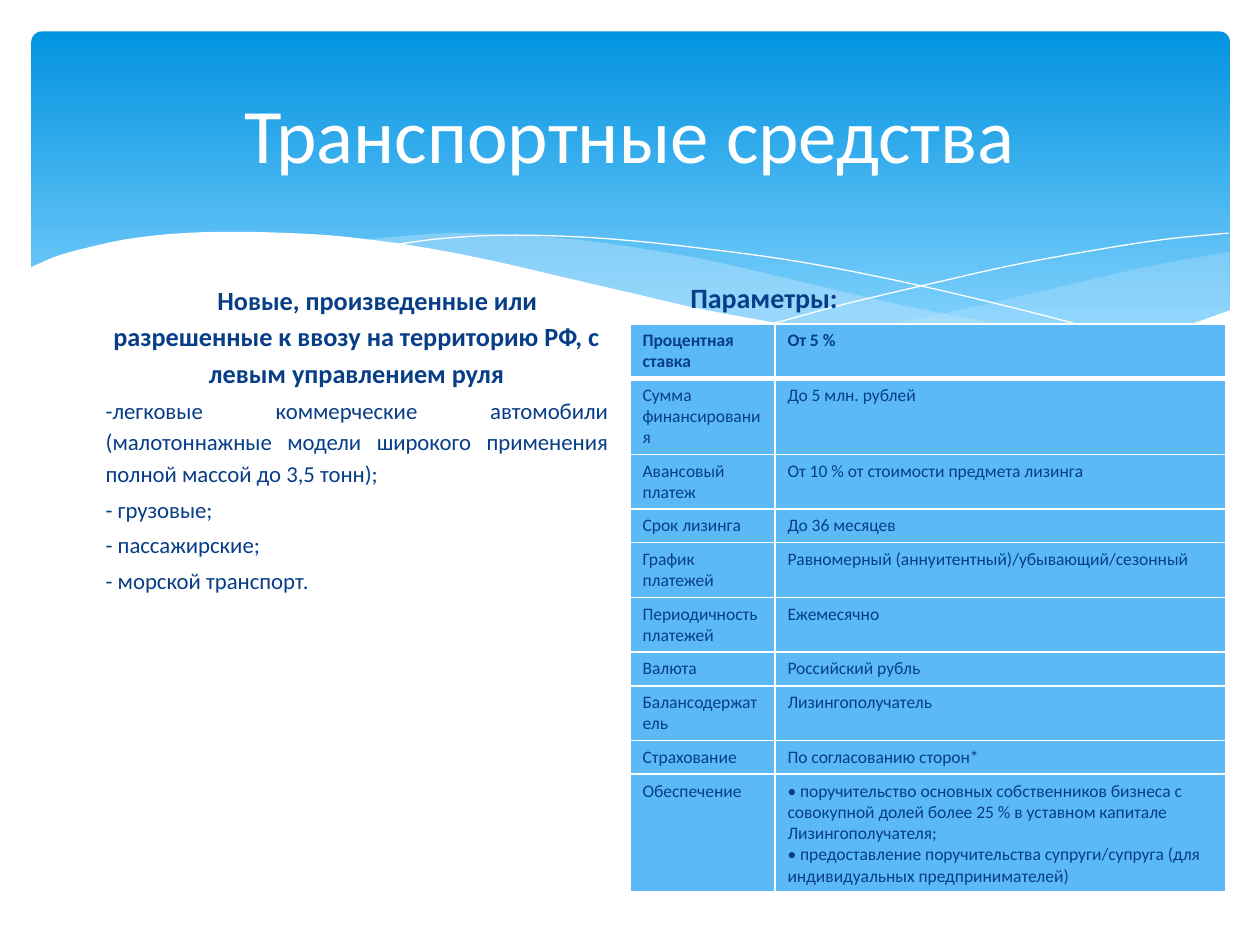
"""Build the vehicle leasing slide: wave header, eligible vehicles and a table of terms."""
from lxml.etree import SubElement
from pptx import Presentation
from pptx.dml.color import RGBColor
from pptx.enum.shapes import MSO_SHAPE
from pptx.enum.text import MSO_ANCHOR, PP_ALIGN as Align
from pptx.oxml import parse_xml
from pptx.oxml.ns import nsdecls, qn
from pptx.util import Pt

SCALE = 9144
FONT = "Calibri"
NAVY = RGBColor(0x07, 0x3E, 0x87)
WHITE = RGBColor(0xFF, 0xFF, 0xFF)
SKY = RGBColor(0x5B, 0xBA, 0xF6)
HEADER_TOP = RGBColor(0x02, 0x93, 0xE0)
HEADER_BOTTOM = RGBColor(0x83, 0xD3, 0xFE)
PALE = RGBColor(0xC6, 0xE7, 0xFC)

TITLE = "Транспортные средства"
ELIGIBLE = "Новые, произведенные или разрешенные к ввозу на территорию РФ, с левым управлением руля"
VEHICLES = [
    "-легковые коммерческие автомобили (малотоннажные модели широкого применения полной массой до 3,5 тонн);",
    "- грузовые;",
    "- пассажирские;",
    "- морской транспорт.",
]
TERMS_HEADING = "Параметры:"
TERMS = [
    (39, ["Процентная ставка"], ["От 5 %"]),
    (21, ["Сумма финансирования"], ["До 5 млн. рублей"]),
    (21, ["Авансовый платеж"], ["От 10 % от стоимости предмета лизинга"]),
    (21, ["Срок лизинга"], ["До 36 месяцев"]),
    (21, ["График платежей"], ["Равномерный (аннуитентный)/убывающий/сезонный"]),
    (34, ["Периодичность", "платежей"], ["Ежемесячно"]),
    (21, ["Валюта"], ["Российский рубль"]),
    (21, ["Балансодержатель"], ["Лизингополучатель"]),
    (21, ["Страхование"], ["По согласованию сторон*"]),
    (88, ["Обеспечение"], [
        "• поручительство основных собственников бизнеса с совокупной долей более 25 % "
        "в уставном капитале Лизингополучателя;",
        "• предоставление поручительства супруги/супруга (для индивидуальных предпринимателей)",
    ]),
]
TERM_COLUMNS = (115, 358)

RIGHT_WAVE = [
    [(976, 200), (935, 207), (891, 216), (832, 230), (779, 242), (729, 253), (661, 265)],
    [(661, 265), (705, 271), (757, 276), (803, 278), (844, 277), (881, 273), (921, 265),
     (949, 257), (976, 247)],
]
MIDDLE_WAVE = [
    [(893, 273), (837, 265), (775, 254), (706, 240), (629, 222), (569, 208), (514, 198),
     (465, 191), (420, 187), (361, 185), (313, 188), (286, 191)],
    [(286, 191), (342, 199), (404, 211), (449, 222), (530, 240), (601, 255), (665, 266),
     (722, 274), (773, 277), (818, 278), (857, 277), (893, 273)],
]
FALLING_LINE = [[(309, 195), (344, 190), (387, 187), (433, 187), (489, 190), (556, 197),
                 (636, 208), (727, 226), (831, 251), (907, 272)]]
RISING_LINE = [[(613, 257), (672, 241), (748, 223), (806, 210), (866, 199), (924, 190), (975, 185)]]
WHITE_WAVE = [
    [(977, 246), (930, 262), (887, 271), (837, 276), (793, 276), (744, 274), (688, 268),
     (626, 258), (555, 245), (503, 233), (447, 220), (391, 207), (340, 197), (292, 190),
     (250, 186), (193, 184), (146, 185), (106, 189), (76, 195), (46, 203), (23, 213)],
    [(23, 329), (977, 329)],
]
WAVES = [
    (RIGHT_WAVE, PALE, 29),
    (MIDDLE_WAVE, PALE, 40),
    (FALLING_LINE, None, 100),
    (RISING_LINE, None, 100),
    (WHITE_WAVE, WHITE, 100),
]


def px(*lengths):
    return [round(length * SCALE) for length in lengths]


def write(frame, text, size, color=NAVY, bold=False, align=Align.LEFT, first=True,
          before=0, spacing=None, margin=0, indent=0):
    paragraph = frame.paragraphs[0] if first else frame.add_paragraph()
    paragraph.alignment = align
    paragraph.space_before = Pt(before)
    if spacing:
        paragraph.line_spacing = spacing
    if margin or indent:
        properties = paragraph._p.get_or_add_pPr()
        properties.set("marL", str(px(margin)[0]))
        properties.set("indent", str(px(indent)[0]))
    run = paragraph.add_run()
    run.text = text
    run.font.name, run.font.size, run.font.bold = FONT, Pt(size), bold
    run.font.color.rgb = color


def smooth(knots, steps=6):
    padded = [knots[0], *knots, knots[-1]]
    points = [knots[0]]
    for a, b, c, d in zip(padded, padded[1:], padded[2:], padded[3:]):
        for t in (step / steps for step in range(1, steps + 1)):
            points.append(tuple(
                (2 * q + (r - p) * t + (2 * p - 5 * q + 4 * r - s) * t ** 2
                 + (3 * q - p - 3 * r + s) * t ** 3) / 2
                for p, q, r, s in zip(a, b, c, d)))
    return points


def draw_wave(shapes, curves, color, opacity):
    start, *rest = [px(*point) for curve in curves for point in smooth(curve)]
    builder = shapes.build_freeform(*start, scale=1.0)
    builder.add_line_segments(rest, close=color is not None)
    wave = builder.convert_to_shape()
    wave.shadow.inherit = False
    if color is None:
        wave.fill.background()
        wave.line.color.rgb = WHITE
        wave.line.width = 0
        return
    wave.fill.solid()
    wave.fill.fore_color.rgb = color
    wave.line.fill.background()
    if opacity < 100:
        tint = wave._element.spPr.find(qn("a:solidFill"))[0]
        SubElement(tint, qn("a:alpha")).set("val", str(opacity * 1000))


def draw_header(shapes):
    header = shapes.add_shape(MSO_SHAPE.ROUNDED_RECTANGLE, *px(25, 25, 951, 270))
    header.adjustments[0] = 0.03
    header.shadow.inherit = False
    header.line.fill.background()
    header.fill.gradient()
    header.fill.gradient_angle = 270
    stops = zip(header.fill.gradient_stops, (0, 0.9), (HEADER_TOP, HEADER_BOTTOM))
    for stop, position, color in stops:
        stop.position = position
        stop.color.rgb = color
    for wave in WAVES:
        draw_wave(shapes, *wave)


def add_text_frame(shapes, box):
    frame = shapes.add_textbox(*px(*box)).text_frame
    frame.word_wrap = True
    return frame


def format_cell(cell, lines, heading):
    cell.fill.solid()
    cell.fill.fore_color.rgb = SKY
    for number, line in enumerate(lines):
        write(cell.text_frame, line, 10, bold=heading, first=number == 0)
    for position, side in enumerate("LRTB"):
        width = Pt(3 if heading and side == "B" else 1)
        cell._tc.get_or_add_tcPr().insert(position, parse_xml(
            f'<a:ln{side} {nsdecls("a")} w="{width}"><a:solidFill>'
            f'<a:srgbClr val="{WHITE}"/></a:solidFill></a:ln{side}>'))


def add_terms(shapes):
    holder = shapes.add_table(len(TERMS), len(TERM_COLUMNS), *px(500, 257, 473, 450))
    table = holder.table
    for column, width in zip(table.columns, px(*TERM_COLUMNS)):
        column.width = width
    for number, (height, *cells) in enumerate(TERMS):
        table.rows[number].height = px(height)[0]
        for cell, lines in zip(table.rows[number].cells, cells):
            format_cell(cell, lines, heading=number == 0)


def main():
    deck = Presentation()
    deck.slide_width, deck.slide_height = px(1000, 750)
    slide = deck.slides.add_slide(deck.slide_layouts[5])
    shapes = slide.shapes
    draw_header(shapes)

    title = shapes.title
    title.left, title.top, title.width, title.height = px(50, 37, 900, 137)
    title.text_frame.vertical_anchor = MSO_ANCHOR.MIDDLE
    write(title.text_frame, TITLE, 44, color=WHITE, align=Align.CENTER)
    shapes._spTree.append(title._element)

    vehicles = add_text_frame(shapes, (74, 202, 418, 468))
    vehicles.margin_top = px(20)[0]
    write(vehicles, ELIGIBLE, 15, bold=True, align=Align.CENTER, spacing=1.15, indent=33)
    for vehicle in VEHICLES:
        write(vehicles, vehicle, 13, align=Align.JUSTIFY, first=False, before=2.5, spacing=1.15)

    write(add_text_frame(shapes, (508, 218, 418, 452)), TERMS_HEADING, 16, bold=True, margin=30)
    add_terms(shapes)
    deck.save("out.pptx")


if __name__ == "__main__":
    main()
